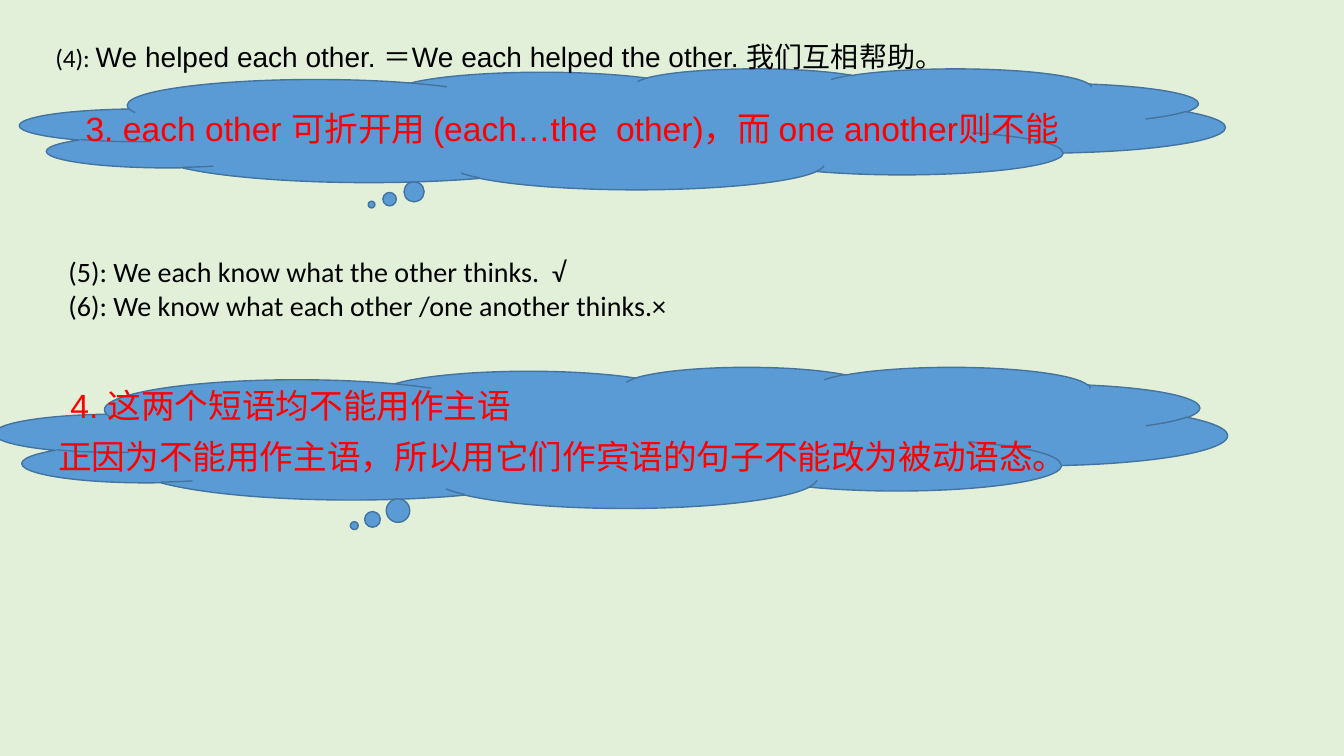
from dataclasses import dataclass

from pptx import Presentation
from pptx.dml.color import RGBColor
from pptx.enum.shapes import MSO_SHAPE
from pptx.enum.text import MSO_AUTO_SIZE
from pptx.slide import Slide
from pptx.util import Inches, Pt

CLOUD = MSO_SHAPE.CLOUD_CALLOUT
GROW = MSO_AUTO_SIZE.SHAPE_TO_FIT_TEXT


@dataclass(frozen=True)
class Theme:
    background: RGBColor = RGBColor(0xE2, 0xF0, 0xD9)
    cloud: RGBColor = RGBColor(0x5B, 0x9B, 0xD5)
    outline: RGBColor = RGBColor(0x43, 0x73, 0x9E)
    example: RGBColor = RGBColor(0, 0, 0)
    rule: RGBColor = RGBColor(0xFF, 0, 0)
    label_size: int = 18
    example_size: int = 20
    rule_size: int = 24
    latin: str = "Arial"
    body: str = "Calibri"


THEME = Theme()


@dataclass(frozen=True)
class Box:
    left: float
    top: float
    width: float
    height: float

    def emu(self) -> tuple[int, int, int, int]:
        return (Inches(self.left), Inches(self.top),
                Inches(self.width), Inches(self.height))


@dataclass(frozen=True)
class Style:
    font: str
    size: int
    color: RGBColor


@dataclass(frozen=True)
class Note:
    box: Box
    lines: tuple[str, ...]
    style: Style
    label: str = ""


EXAMPLE = Style(THEME.body, THEME.example_size, THEME.example)
EXAMPLE_LATIN = Style(THEME.latin, THEME.example_size, THEME.example)
RULE = Style(THEME.body, THEME.rule_size, THEME.rule)
RULE_LATIN = Style(THEME.latin, THEME.rule_size, THEME.rule)

CLOUDS = (Box(-0.05, 3.64, 12.22, 1.4), Box(0.2, 0.68, 11.95, 1.2))

NOTES = (
    Note(Box(0.45, 0.34, 12.07, 0.43),
         ("We helped each other. ＝We each helped the other. 我们互相帮助。",),
         EXAMPLE_LATIN, label="(4): "),
    Note(Box(0.75, 1.02, 10.92, 0.5),
         ("3. each other 可折开用 (each…the  other)，而 one another则不能",),
         RULE_LATIN),
    Note(Box(0.58, 2.48, 11.07, 0.77),
         ("(5): We each know what the other thinks.  √",
          "(6): We know what each other /one another thinks.×"), EXAMPLE),
    Note(Box(0.6, 3.77, 10.65, 0.5), ("4. 这两个短语均不能用作主语",), RULE_LATIN),
    Note(Box(0.48, 4.28, 10.65, 0.5),
         ("正因为不能用作主语，所以用它们作宾语的句子不能改为被动语态。",), RULE),
)


def add_cloud(s: Slide, box: Box) -> None:
    """Draw a thought cloud."""
    sp = s.shapes.add_shape(CLOUD, *box.emu())
    sp.shadow.inherit = False
    sp.fill.solid()
    sp.fill.fore_color.rgb = THEME.cloud
    sp.line.color.rgb = THEME.outline
    sp.line.width = Pt(1)


def add_note(s: Slide, note: Note) -> None:
    """Write a note, with its smaller label if it has one."""
    tf = s.shapes.add_textbox(*note.box.emu()).text_frame
    tf.word_wrap = True
    tf.auto_size = GROW
    for i, line in enumerate(note.lines):
        p = tf.add_paragraph() if i else tf.paragraphs[0]
        p.font.name = note.style.font
        p.font.size = Pt(note.style.size)
        p.font.color.rgb = note.style.color
        if note.label:
            r = p.add_run()
            r.text = note.label
            r.font.name = THEME.body
            r.font.size = Pt(THEME.label_size)
        p.add_run().text = line


def main() -> None:
    """Build and save the slide."""
    prs = Presentation()
    prs.slide_width, prs.slide_height = Inches(13.33), Inches(7.5)
    s = prs.slides.add_slide(prs.slide_layouts[6])
    s.background.fill.solid()
    s.background.fill.fore_color.rgb = THEME.background
    for box in CLOUDS:
        add_cloud(s, box)
    for note in NOTES:
        add_note(s, note)
    prs.save("out.pptx")


if __name__ == "__main__":
    main()
